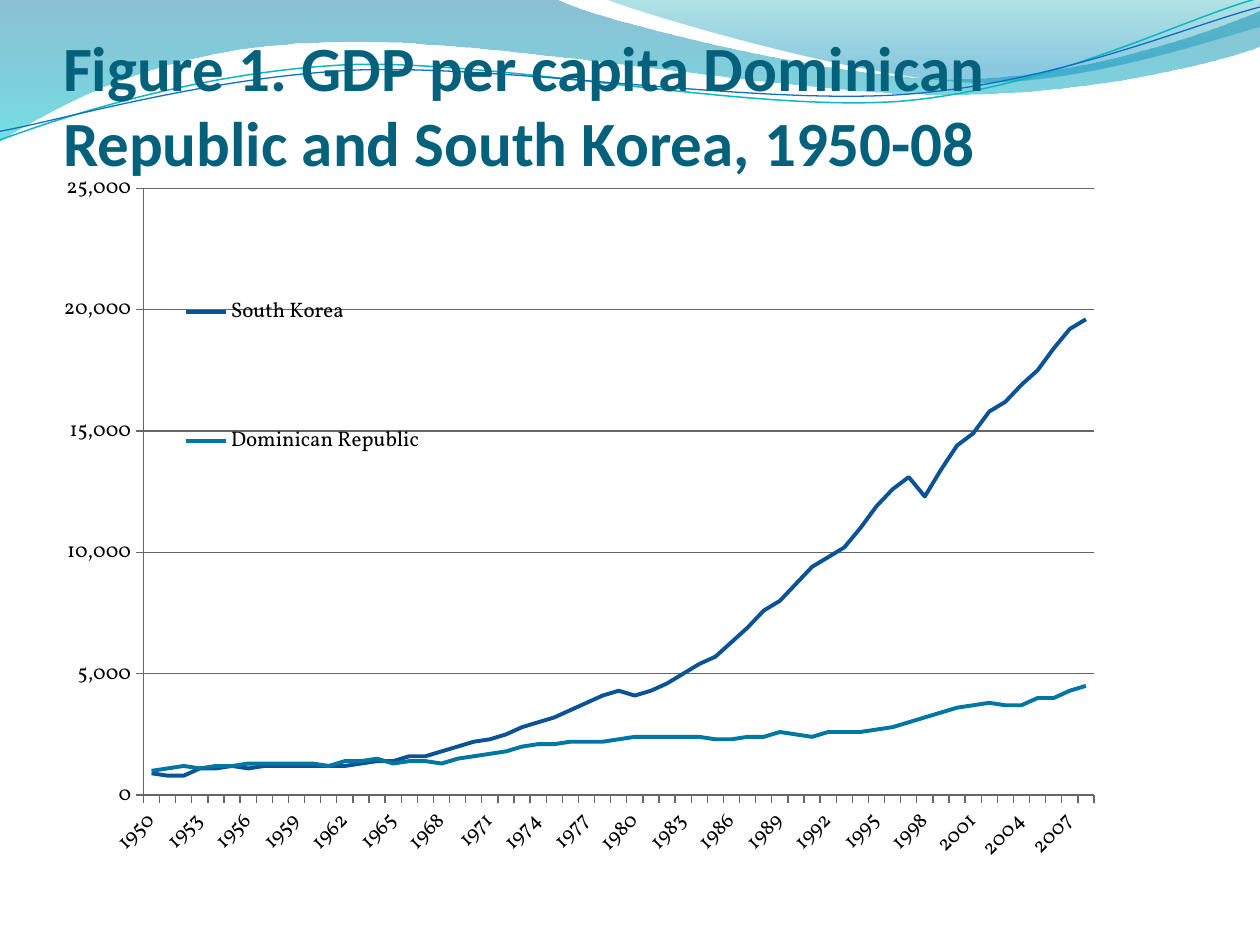
"""Build a slide with a line chart of GDP per capita under a wave banner."""
import lxml.etree
import pptx
import pptx.chart.data
import pptx.dml.color
import pptx.enum.chart
import pptx.enum.text
import pptx.oxml.ns
import pptx.util

Pt = pptx.util.Pt
RGBColor = pptx.dml.color.RGBColor
qn = pptx.oxml.ns.qn

TITLE_TEAL = RGBColor(0x04, 0x61, 0x7B)
KOREA_BLUE = RGBColor(0x0B, 0x53, 0x95)
DOMINICAN_BLUE = RGBColor(0x00, 0x76, 0xA3)
AXIS_GREY = RGBColor(0x66, 0x66, 0x66)
BLACK = RGBColor(0, 0, 0)
WAVE_TEAL = RGBColor(0x0A, 0xB8, 0xBF)
WAVE_BLUE = RGBColor(0x0F, 0x6F, 0xC6)
BAND_BLUE = RGBColor(0x00, 0x74, 0xA1)
BAND_CYAN = RGBColor(0x00, 0xC6, 0xCF)
CREST_GREEN = RGBColor(0x00, 0xA1, 0xA9)
CREST_BLUE = RGBColor(0x00, 0x8B, 0xBF)

BANDS = [
    ((0, 0), [(317, -1), (343, 12, 478, 45, 546, 45), (614, 45, 690, 19, 720, 6),
              (721, 26), (708, 32, 626, 55, 537, 54), (447, 54, 275, 20, 185, 24),
              (93, 26, 33, 60, -1, 81)],
     [(0, BAND_BLUE, 45), (100, BAND_CYAN, 55)]),
    ((345, -1), [(367, 8, 491, 45, 554, 47), (616, 49, 692, 23, 720, 15), (720, 0)],
     [(0, CREST_GREEN, 30), (80, CREST_BLUE, 45)]),
]
STRANDS = [
    ((0, 80), [(35, 67, 114, 41, 199, 37), (284, 34, 427, 64, 513, 58),
               (600, 51, 675, 11, 719, -1)], WAVE_TEAL, 0.85),
    ((0, 75), [(34, 69, 118, 44, 204, 40), (290, 37, 430, 60, 516, 54),
               (602, 48, 678, 15, 720, 4)], WAVE_BLUE, 0.75),
]
YEARS = [str(year) for year in range(1950, 2009)]
SERIES = [
    ("South Korea", KOREA_BLUE, [
        900, 800, 800, 1100, 1100, 1200, 1100, 1200, 1200, 1200,
        1200, 1200, 1200, 1300, 1400, 1400, 1600, 1600, 1800, 2000,
        2200, 2300, 2500, 2800, 3000, 3200, 3500, 3800, 4100, 4300,
        4100, 4300, 4600, 5000, 5400, 5700, 6300, 6900, 7600, 8000,
        8700, 9400, 9800, 10200, 11000, 11900, 12600, 13100, 12300, 13400,
        14400, 14900, 15800, 16200, 16900, 17500, 18400, 19200, 19600]),
    ("Dominican Republic", DOMINICAN_BLUE, [
        1000, 1100, 1200, 1100, 1200, 1200, 1300, 1300, 1300, 1300,
        1300, 1200, 1400, 1400, 1500, 1300, 1400, 1400, 1300, 1500,
        1600, 1700, 1800, 2000, 2100, 2100, 2200, 2200, 2200, 2300,
        2400, 2400, 2400, 2400, 2400, 2300, 2300, 2400, 2400, 2600,
        2500, 2400, 2600, 2600, 2600, 2700, 2800, 3000, 3200, 3400,
        3600, 3700, 3800, 3700, 3700, 4000, 4000, 4300, 4500]),
]
CHART_WIDTH, CHART_HEIGHT = 684, 455.76


def apply(target, **values):
    """Set every given attribute on the target."""
    for name, value in values.items():
        setattr(target, name, value)


def place(parent, index, left, top, width, height, inner=False):
    """Give a chart part a manual layout, from lengths in points."""
    for old in parent.findall(qn("c:layout")):
        parent.remove(old)
    layout = lxml.etree.Element(qn("c:layout"))
    manual = lxml.etree.SubElement(layout, qn("c:manualLayout"))
    values = {"layoutTarget": "inner"} if inner else {}
    values.update(xMode="edge", yMode="edge", x=left / CHART_WIDTH, y=top / CHART_HEIGHT,
                  w=width / CHART_WIDTH, h=height / CHART_HEIGHT)
    for name, value in values.items():
        lxml.etree.SubElement(manual, qn("c:" + name)).set("val", str(value))
    parent.insert(index, layout)


class Painter:
    """Hold the style and the current slide."""

    title_font = {"name": "Calibri", "size": Pt(36), "bold": True}
    chart_font = {"name": "Vollkorn", "size": Pt(12)}

    def __init__(self, slide):
        """Keep the slide to draw on."""
        self.slide = slide

    def outline(self, start, segments, close):
        """Add a freeform of straight (2 numbers) and cubic (6 numbers) segments."""
        builder = self.slide.shapes.build_freeform(Pt(start[0]), Pt(start[1]), scale=1.0)
        builder.add_line_segments([(Pt(segment[-2]), Pt(segment[-1]))
                                   for segment in segments], close=close)
        shape = builder.convert_to_shape()
        shape.shadow.inherit = False
        for side, segment in zip(list(shape._element.iter(qn("a:lnTo"))), segments):
            if len(segment) == 6:
                curve = lxml.etree.Element(qn("a:cubicBezTo"))
                for x, y in zip(segment[::2], segment[1::2]):
                    lxml.etree.SubElement(curve, qn("a:pt"), x=str(Pt(x) - shape.left),
                                          y=str(Pt(y) - shape.top))
                side.getparent().replace(side, curve)
        return shape

    def band(self, start, segments, stops):
        """Add a closed wave with a translucent downward gradient."""
        shape = self.outline(start, segments, True)
        shape.line.fill.background()
        shape.fill.gradient()
        gradient = shape._element.spPr.find(qn("a:gradFill"))
        gradient.find(qn("a:lin")).set("ang", "5400000")
        stop_list = gradient.find(qn("a:gsLst"))
        for old in list(stop_list):
            stop_list.remove(old)
        for position, color, opacity in stops:
            stop = lxml.etree.SubElement(stop_list, qn("a:gs"), pos=str(position * 1000))
            tint = lxml.etree.SubElement(stop, qn("a:srgbClr"), val=str(color))
            lxml.etree.SubElement(tint, qn("a:alpha"), val=str(opacity * 1000))

    def strand(self, start, segments, color, width):
        """Add an open wave line."""
        shape = self.outline(start, segments, False)
        shape.fill.background()
        shape.line.color.rgb = color
        shape.line.width = Pt(width)

    def title(self, text):
        """Format the title placeholder and bring it to the front."""
        box = self.slide.shapes.title
        box._element.getparent().append(box._element)
        apply(box, left=Pt(36), top=Pt(55.5), width=Pt(648), height=Pt(90))
        frame = box.text_frame
        apply(frame, text=text, word_wrap=True, margin_left=0, margin_right=0,
              margin_top=Pt(3.6), margin_bottom=Pt(43),
              auto_size=pptx.enum.text.MSO_AUTO_SIZE.NONE,
              vertical_anchor=pptx.enum.text.MSO_ANCHOR.BOTTOM)
        para = frame.paragraphs[0]
        para.alignment = pptx.enum.text.PP_ALIGN.LEFT
        apply(para.runs[0].font, **self.title_font)
        para.runs[0].font.color.rgb = TITLE_TEAL

    def line_chart(self, categories, series):
        """Add the line chart with its axes and legend."""
        data = pptx.chart.data.CategoryChartData(number_format="#,##0")
        data.categories = categories
        for name, _, values in series:
            data.add_series(name, values)
        chart = self.slide.shapes.add_chart(
            pptx.enum.chart.XL_CHART_TYPE.LINE, 0, Pt(84.24), Pt(CHART_WIDTH),
            Pt(CHART_HEIGHT), data).chart
        apply(chart, has_title=False, has_legend=True)
        apply(chart.font, **self.chart_font)
        chart.font.color.rgb = BLACK
        chart.plots[0].vary_by_categories = False
        for line, (_, color, _) in zip(chart.plots[0].series, series):
            line.smooth = False
            line.marker.style = pptx.enum.chart.XL_MARKER_STYLE.NONE
            line.format.line.color.rgb = color
            line.format.line.width = Pt(2.25)
        years, amounts = chart.category_axis, chart.value_axis
        apply(amounts, minimum_scale=0, maximum_scale=25000, major_unit=5000,
              has_major_gridlines=True)
        apply(amounts.tick_labels, number_format="#,##0", number_format_is_linked=False)
        for axis in (years, amounts):
            axis.major_tick_mark = pptx.enum.chart.XL_TICK_MARK.OUTSIDE
        for part in (years, amounts, amounts.major_gridlines):
            part.format.line.color.rgb = AXIS_GREY
            part.format.line.width = Pt(0.75)
        apply(years.tick_labels.font, **self.chart_font)
        years._element.find(qn("c:txPr")).find(qn("a:bodyPr")).set("rot", "-2700000")
        skip = lxml.etree.Element(qn("c:tickLblSkip"), val="3")
        years._element.find(qn("c:noMultiLvlLbl")).addprevious(skip)
        apply(chart.legend, position=pptx.enum.chart.XL_LEGEND_POSITION.RIGHT,
              include_in_layout=False)
        place(chart.legend._element, 1, 101, 29, 144, 204)
        place(chart._chartSpace.chart.plotArea, 0, 82, 23.3, 543.2, 346.9, inner=True)


def main():
    """Build and save the deck."""
    deck = pptx.Presentation()
    apply(deck, slide_width=Pt(720), slide_height=Pt(540))
    page = Painter(deck.slides.add_slide(deck.slide_layouts[5]))
    for band in BANDS:
        page.band(*band)
    for strand in STRANDS:
        page.strand(*strand)
    page.title("Figure 1. GDP per capita Dominican Republic and South Korea, 1950-08")
    page.line_chart(YEARS, SERIES)
    deck.save("out.pptx")


if __name__ == "__main__":
    main()
